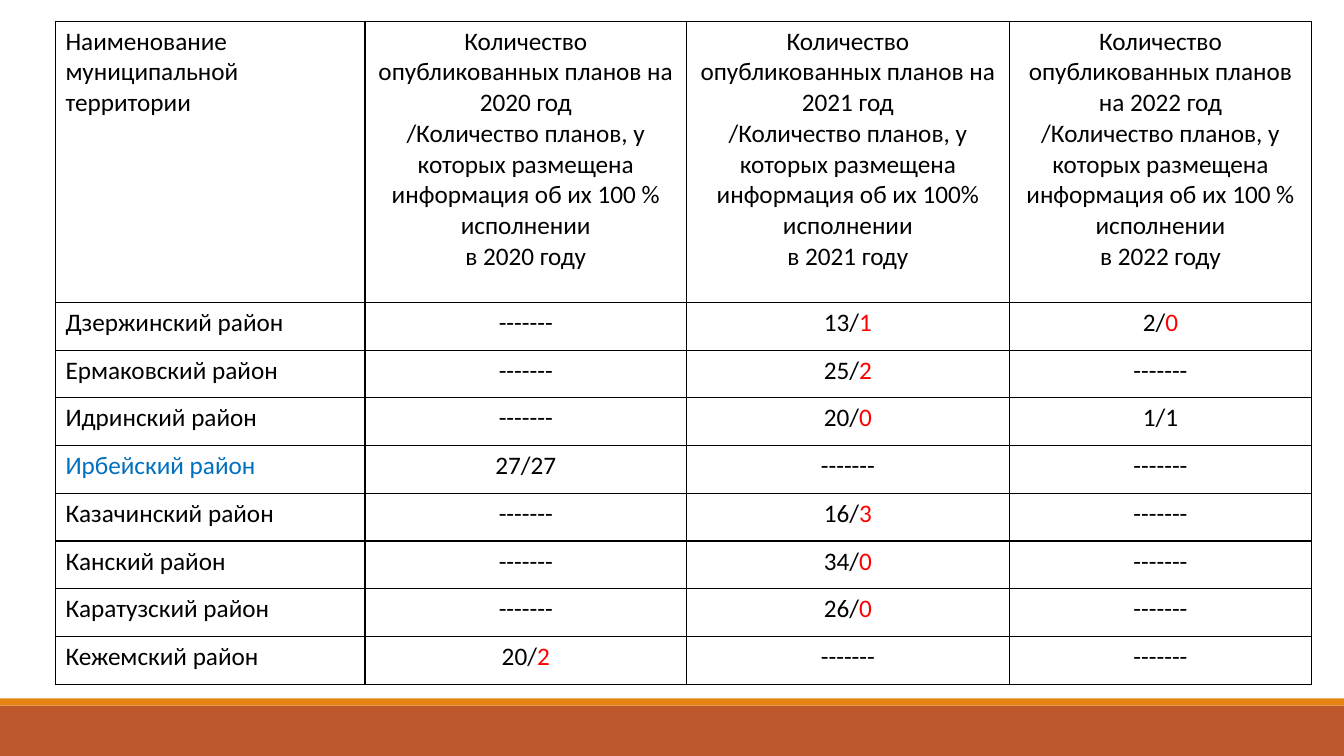
from lxml import etree
from pptx import Presentation
from pptx import util as u
from pptx.dml.color import RGBColor
from pptx.enum import shapes, text
from pptx.oxml import ns

BLACK = RGBColor(0x00, 0x00, 0x00)
RED = RGBColor(0xFF, 0x00, 0x00)
BLUE = RGBColor(0x00, 0x70, 0xC0)
RUST = RGBColor(0xBD, 0x58, 0x2C)
ORANGE = RGBColor(0xE4, 0x83, 0x12)

WIDTH, HEIGHT = 13.33, 7.5
COLUMNS = [3.07, 3.19, 3.2, 3]
HEADER_HEIGHT, TABLE_HEIGHT = 2.79, 6.58
DASH = "-------"

# Published plans / plans fully carried out, by year
DISTRICTS = [
    ("Дзержинский район", DASH, "13/1", "2/0"),
    ("Ермаковский район", DASH, "25/2", DASH),
    ("Идринский район", DASH, "20/0", "1/1"),
    ("Ирбейский район", "27/27", DASH, DASH),
    ("Казачинский район", DASH, "16/3", DASH),
    ("Канский район", DASH, "34/0", DASH),
    ("Каратузский район", DASH, "26/0", DASH),
    ("Кежемский район", "20/2", DASH, DASH),
]
COMPLETE = "Ирбейский район"


def year_header(year, percent):
    return (f"Количество опубликованных планов на {year} год\n"
            "/Количество планов, у которых размещена информация "
            f"об их {percent} исполнении\nв {year} году")


class PlanSlide:
    """Holds the style and the current slide."""

    font, size, border = "Calibri", u.Pt(18), u.Pt(1)

    def __init__(self, deck):
        self.deck = deck
        self.page = deck.slides.add_slide(deck.slide_layouts[6])

    def band(self, top, height, color):
        """Full-width band; top and height are shares of the slide height."""
        full = self.deck.slide_height
        box = self.page.shapes.add_shape(
            shapes.MSO_SHAPE.RECTANGLE, 0, round(top * full),
            self.deck.slide_width, round(height * full))
        box.shadow.inherit = False
        box.fill.solid()
        box.fill.fore_color.rgb = color
        box.line.fill.background()

    def table(self, left, top, columns, heights, rows):
        """Table at shares of the slide size; columns and heights in inches."""
        frame = self.page.shapes.add_table(
            len(rows), len(columns),
            round(left * self.deck.slide_width),
            round(top * self.deck.slide_height),
            u.Inches(sum(columns)), u.Inches(sum(heights)))
        grid = frame.table
        grid.first_row = grid.horz_banding = False
        for column, width in zip(grid.columns, columns):
            column.width = u.Inches(width)
        for row, height in zip(grid.rows, heights):
            row.height = u.Inches(height)
        for r, values in enumerate(rows):
            for c, value in enumerate(values):
                self.cell(grid.cell(r, c), value, centred=c > 0, split=r > 0)

    def cell(self, cell, value, centred, split):
        self.outline(cell)
        cell.fill.background()
        frame = cell.text_frame
        frame.text = value
        for para in frame.paragraphs:
            if centred:
                para.alignment = text.PP_ALIGN.CENTER
            for span in para.runs:
                self.style(span, BLUE if value == COMPLETE else BLACK)
        # The number of incomplete results after the slash is red
        published, slash, done = value.partition("/")
        if split and slash and published != done:
            para = frame.paragraphs[0]
            para.runs[0].text = published + slash
            span = para.add_run()
            span.text = done
            self.style(span, RED)

    def style(self, span, color):
        span.font.name, span.font.size = self.font, self.size
        span.font.bold = False
        span.font.color.rgb = color

    def outline(self, cell):
        properties = cell._tc.get_or_add_tcPr()
        for side in ("a:lnL", "a:lnR", "a:lnT", "a:lnB"):
            line = etree.SubElement(properties, ns.qn(side), w=str(self.border))
            fill = etree.SubElement(line, ns.qn("a:solidFill"))
            etree.SubElement(fill, ns.qn("a:srgbClr"), val=str(BLACK))


def main():
    deck = Presentation()
    deck.slide_width, deck.slide_height = u.Inches(WIDTH), u.Inches(HEIGHT)
    slide = PlanSlide(deck)

    # Footer bands
    slide.band(7 / HEIGHT, 0.5 / HEIGHT, RUST)
    slide.band(6.93 / HEIGHT, 0.07 / HEIGHT, ORANGE)

    # Table of districts
    header = ("Наименование муниципальной территории",
              year_header(2020, "100 %"),
              year_header(2021, "100%"),
              year_header(2022, "100 %"))
    row_height = (TABLE_HEIGHT - HEADER_HEIGHT) / len(DISTRICTS)
    heights = [HEADER_HEIGHT] + [row_height] * len(DISTRICTS)
    slide.table(0.55 / WIDTH, 0.21 / HEIGHT, COLUMNS, heights,
                [header] + DISTRICTS)

    deck.save("out.pptx")


if __name__ == "__main__":
    main()
